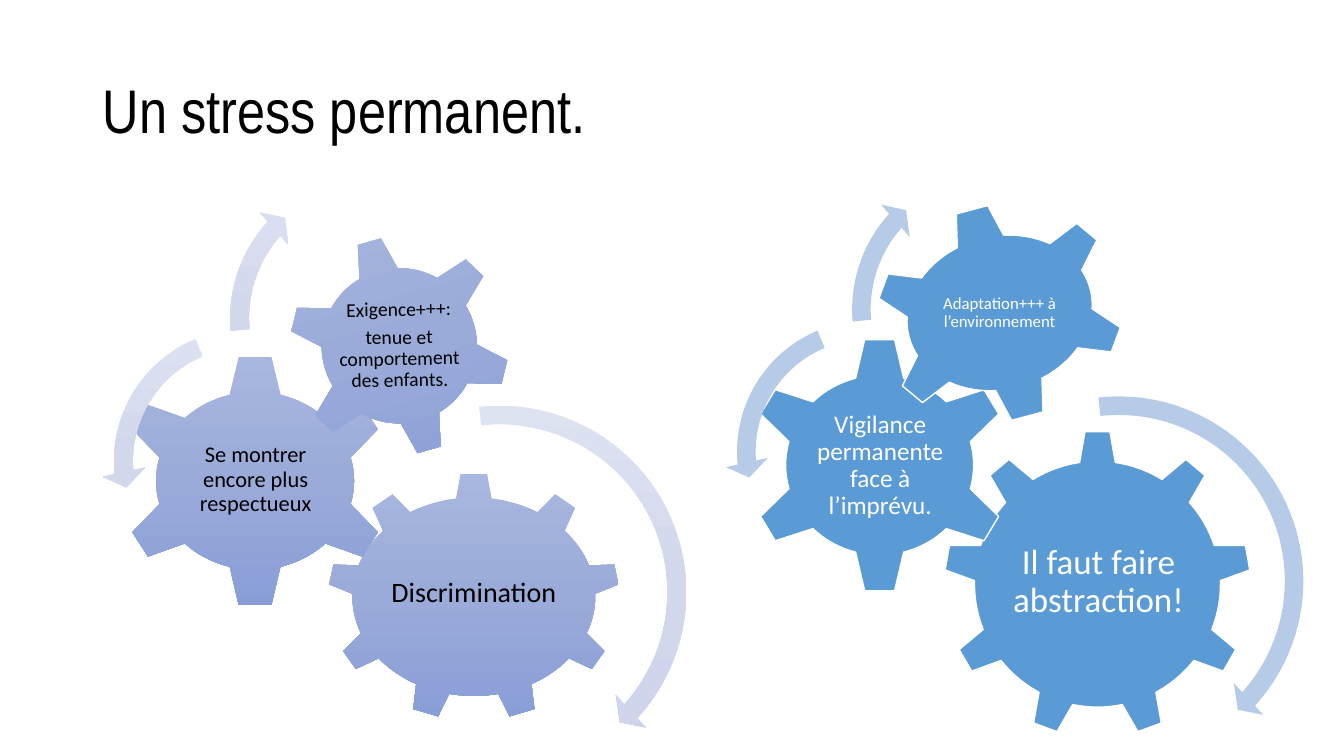
from copy import deepcopy
from dataclasses import dataclass

from pptx import Presentation
from pptx.dml.color import RGBColor
from pptx.enum.shapes import MSO_SHAPE
from pptx.enum.text import MSO_ANCHOR, PP_ALIGN
from pptx.oxml.ns import qn
from pptx.util import Inches, Pt


@dataclass(frozen=True)
class Theme:
    title_font: str = "Arial Narrow"
    body_font: str = "Calibri"
    black: str = "000000"
    white: str = "FFFFFF"
    lavender: tuple = ("A8B7DF", "9AABD9", "889ED7")
    pale_lavender: tuple = ("DEE3F2", "D2D8EC", "CCD3EB")
    blue: tuple = ("5B9BD5",)
    pale_blue: tuple = ("B5CBE7",)
    title: int = 44
    abstraction: int = 25
    discrimination: int = 20
    vigilance: int = 18
    respect: int = 16
    demands: int = 14
    adaptation: int = 12


THEME = Theme()

PERCENT, DEGREE = 0.01, 0.6
ARROW_UNITS = (PERCENT, DEGREE, DEGREE, DEGREE, PERCENT)
LOWER_ARROW = (MSO_SHAPE.CIRCULAR_ARROW, (4.7, 4.98, 42.24, 263.71, 5.5))
LEFT_ARROW = (MSO_SHAPE.LEFT_CIRCULAR_ARROW, (6.5, 7.17, 174.82, 247.3, 7.5))
UPPER_ARROW = (MSO_SHAPE.CIRCULAR_ARROW, (6, 6.57, 221.9, 175.14, 7))


def paint(shape, colours):
    if len(colours) == 1:
        shape.fill.solid()
        shape.fill.fore_color.rgb = RGBColor.from_string(colours[0])
        return
    shape.fill.gradient()
    shape.fill.gradient_angle = 270
    stop_list = shape._element.spPr.find(qn("a:gradFill")).find(qn("a:gsLst"))
    stop_list.insert(1, deepcopy(stop_list[0]))
    for index, (stop, colour) in enumerate(zip(shape.fill.gradient_stops, colours)):
        stop.position = index / (len(colours) - 1)
        stop.color.rgb = RGBColor.from_string(colour)


def add_figure(shapes, preset, box, colours, outline=None, rotation=0):
    figure = shapes.add_shape(preset, *map(Inches, box))
    figure.shadow.inherit = False
    figure.rotation = rotation
    paint(figure, colours)
    if outline:
        figure.line.color.rgb = RGBColor.from_string(outline)
        figure.line.width = Pt(1)
    else:
        figure.line.fill.background()
    return figure


def add_arrow(shapes, arrow, left, top, size, colours):
    preset, bends = arrow
    figure = add_figure(shapes, preset, (left, top, size, size), colours)
    for index, (bend, unit) in enumerate(zip(bends, ARROW_UNITS)):
        figure.adjustments[index] = bend * unit


def add_text(shapes, text, *, box, size, colour, font=THEME.body_font,
             align=PP_ALIGN.CENTER, inset=(0.02, 0.02), gap=0.35, rotation=0):
    label = shapes.add_textbox(*map(Inches, box))
    label.rotation = rotation
    frame = label.text_frame
    frame.word_wrap = True
    frame.vertical_anchor = MSO_ANCHOR.MIDDLE
    frame.margin_left = frame.margin_right = Inches(inset[0])
    frame.margin_top = frame.margin_bottom = Inches(inset[1])
    frame.text = text
    for paragraph in frame.paragraphs:
        paragraph.alignment = align
        paragraph.line_spacing = 0.9
        paragraph.space_after = Pt(gap * size)
        for run in paragraph.runs:
            run.font.name = font
            run.font.size = Pt(size)
            run.font.color.rgb = RGBColor.from_string(colour)


def add_gears(slide, gears, arrows, *, gear_fill, arrow_fill, text_colour, outline=None):
    shapes = slide.shapes.add_group_shape().shapes
    for preset, gear_box, rotation, text, label_format in gears:
        add_figure(shapes, preset, gear_box, gear_fill, outline, rotation)
        add_text(shapes, text, colour=text_colour, **label_format)
    for arrow, left, top, size in arrows:
        add_arrow(shapes, arrow, left, top, size, arrow_fill)


def main():
    deck = Presentation()
    deck.slide_width, deck.slide_height = Inches(13.33), Inches(7.5)
    slide = deck.slides.add_slide(deck.slide_layouts[6])

    add_text(slide.shapes, "Un stress permanent.", box=(0.92, 0.4, 11.5, 1.45),
             size=THEME.title, colour=THEME.black, font=THEME.title_font,
             align=PP_ALIGN.LEFT, inset=(0.1, 0.05), gap=0)

    wide_inset = (0.03, 0.03)
    pressure_gears = [
        (MSO_SHAPE.GEAR_9, (3.25, 4.69, 2.9, 2.46), 0, "Discrimination",
         dict(box=(3.8, 5.26, 1.8, 1.26), size=THEME.discrimination, inset=wide_inset)),
        (MSO_SHAPE.GEAR_6, (1.17, 3.51, 2.72, 2.52), 0,
         "Se montrer encore plus respectueux",
         dict(box=(1.84, 4.14, 1.39, 1.24), size=THEME.respect)),
        (MSO_SHAPE.GEAR_6, (2.86, 2.33, 2.2, 2.2), 344,
         "Exigence+++:\ntenue et comportement des enfants.",
         dict(box=(3.31, 2.81, 1.3, 1.23), size=THEME.demands, rotation=359)),
    ]
    pressure_arrows = [
        (LOWER_ARROW, 2.98, 3.9, 3.95),
        (LEFT_ARROW, 1.01, 3.14, 2.87),
        (UPPER_ARROW, 2.16, 1.61, 3.1),
    ]
    add_gears(slide, pressure_gears, pressure_arrows, gear_fill=THEME.lavender,
              arrow_fill=THEME.pale_lavender, text_colour=THEME.black)

    response_gears = [
        (MSO_SHAPE.GEAR_9, (9.36, 4.27, 3.05, 3.05), 0, "Il faut faire abstraction!",
         dict(box=(9.98, 4.99, 1.83, 1.57), size=THEME.abstraction, inset=wide_inset)),
        (MSO_SHAPE.GEAR_6, (7.41, 3.34, 2.63, 2.55), 0,
         "Vigilance permanente face à l’imprévu.",
         dict(box=(8.07, 3.99, 1.32, 1.26), size=THEME.vigilance, inset=wide_inset)),
        (MSO_SHAPE.GEAR_6, (8.66, 2.02, 2.51, 2.17), 345,
         "Adaptation+++ à l’environnement",
         dict(box=(9.23, 2.48, 1.37, 1.26), size=THEME.adaptation)),
    ]
    response_arrows = [
        (LOWER_ARROW, 9.14, 3.81, 3.91),
        (LEFT_ARROW, 7.19, 3.06, 2.84),
        (UPPER_ARROW, 8.33, 1.54, 3.06),
    ]
    add_gears(slide, response_gears, response_arrows, gear_fill=THEME.blue,
              arrow_fill=THEME.pale_blue, text_colour=THEME.white, outline=THEME.white)

    deck.save("out.pptx")


if __name__ == "__main__":
    main()
